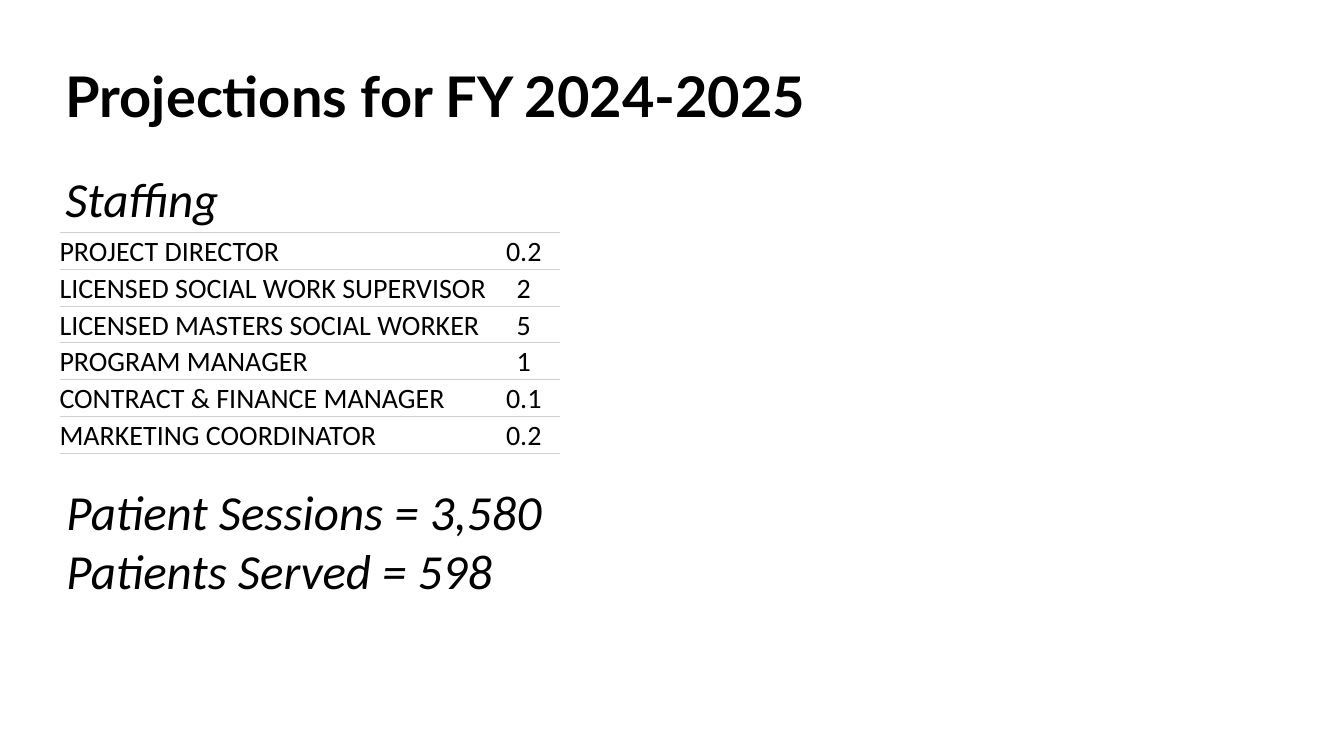
import pptx
import pptx.dml.color
import pptx.enum.text
import pptx.oxml
import pptx.oxml.ns
import pptx.util

PX = 9144  # 100 px to the inch
BLACK = pptx.dml.color.RGBColor(0x00, 0x00, 0x00)
RULE_GRAY = pptx.dml.color.RGBColor(0xD0, 0xCE, 0xCE)
ALIGN = pptx.enum.text.PP_ALIGN
ANCHOR = pptx.enum.text.MSO_ANCHOR

STAFFING = [
    ("PROJECT DIRECTOR", "0.2"),
    ("LICENSED SOCIAL WORK SUPERVISOR", "2"),
    ("LICENSED MASTERS SOCIAL WORKER", "5"),
    ("PROGRAM MANAGER", "1"),
    ("CONTRACT & FINANCE MANAGER", "0.1"),
    ("MARKETING COORDINATOR", "0.2"),
]
COLUMN_WIDTHS = (425, 71)
ROW_HEIGHTS = (37, 37, 36, 36, 37, 37)


def px(*lengths):
    return [pptx.util.Emu(n * PX) for n in lengths]


def write(tf, *lines, size, font="Calibri", bold=False, italic=False,
          align=ALIGN.LEFT, spacing=1.0):
    for i, line in enumerate(lines):
        p = tf.paragraphs[0] if i == 0 else tf.add_paragraph()
        p.alignment = align
        p.line_spacing = spacing
        r = p.add_run()
        r.text = line
        r.font.name = font
        r.font.size = pptx.util.Pt(size)
        r.font.bold = bold
        r.font.italic = italic
        r.font.color.rgb = BLACK


def set_title(slide, text, box):
    sp = slide.shapes.title
    sp.left, sp.top, sp.width, sp.height = px(*box)
    tf = sp.text_frame
    tf.auto_size = pptx.enum.text.MSO_AUTO_SIZE.NONE
    tf.vertical_anchor = ANCHOR.TOP
    write(tf, text, size=40, font="Lato", bold=True, spacing=0.9)


def add_heading(slide, box, *lines):
    tf = slide.shapes.add_textbox(*px(*box)).text_frame
    tf.word_wrap = True
    tf.auto_size = pptx.enum.text.MSO_AUTO_SIZE.SHAPE_TO_FIT_TEXT
    write(tf, *lines, size=35, italic=True)


def rule_cell(cell):
    """Draw hairlines above and below the cell and none at its sides."""
    rule = f'<a:solidFill><a:srgbClr val="{RULE_GRAY}"/></a:solidFill>'
    sides = {"lnL": "<a:noFill/>", "lnR": "<a:noFill/>", "lnT": rule, "lnB": rule}
    tc_pr = cell._tc.get_or_add_tcPr()
    for i, (tag, fill) in enumerate(sides.items()):
        tc_pr.insert(i, pptx.oxml.parse_xml(
            f'<a:{tag} {pptx.oxml.ns.nsdecls("a")} w="6350">{fill}</a:{tag}>'))


def add_staff_table(slide, left, top):
    frame = slide.shapes.add_table(
        len(STAFFING), len(COLUMN_WIDTHS),
        *px(left, top, sum(COLUMN_WIDTHS), sum(ROW_HEIGHTS)))
    table = frame.table
    table.first_row = table.horz_banding = False
    for column, width in zip(table.columns, px(*COLUMN_WIDTHS)):
        column.width = width
    for row, height, values in zip(table.rows, px(*ROW_HEIGHTS), STAFFING):
        row.height = height
        for cell, text, align in zip(row.cells, values, (ALIGN.LEFT, ALIGN.CENTER)):
            cell.margin_left = cell.margin_right = 0
            cell.margin_top = cell.margin_bottom = 0
            cell.vertical_anchor = ANCHOR.BOTTOM
            cell.fill.background()
            rule_cell(cell)
            write(cell.text_frame, text, size=20, align=align)


def main():
    prs = pptx.Presentation()
    prs.slide_width, prs.slide_height = px(1333, 750)
    slide = prs.slides.add_slide(prs.slide_layouts[5])
    set_title(slide, "Projections for FY 2024-2025", (55, 64, 1208, 94))
    add_heading(slide, (55, 162, 237, 69), "Staffing")
    add_heading(slide, (56, 473, 544, 128),
                "Patient Sessions = 3,580", "Patients Served = 598")
    add_staff_table(slide, 59, 230)
    prs.save("out.pptx")


if __name__ == "__main__":
    main()
